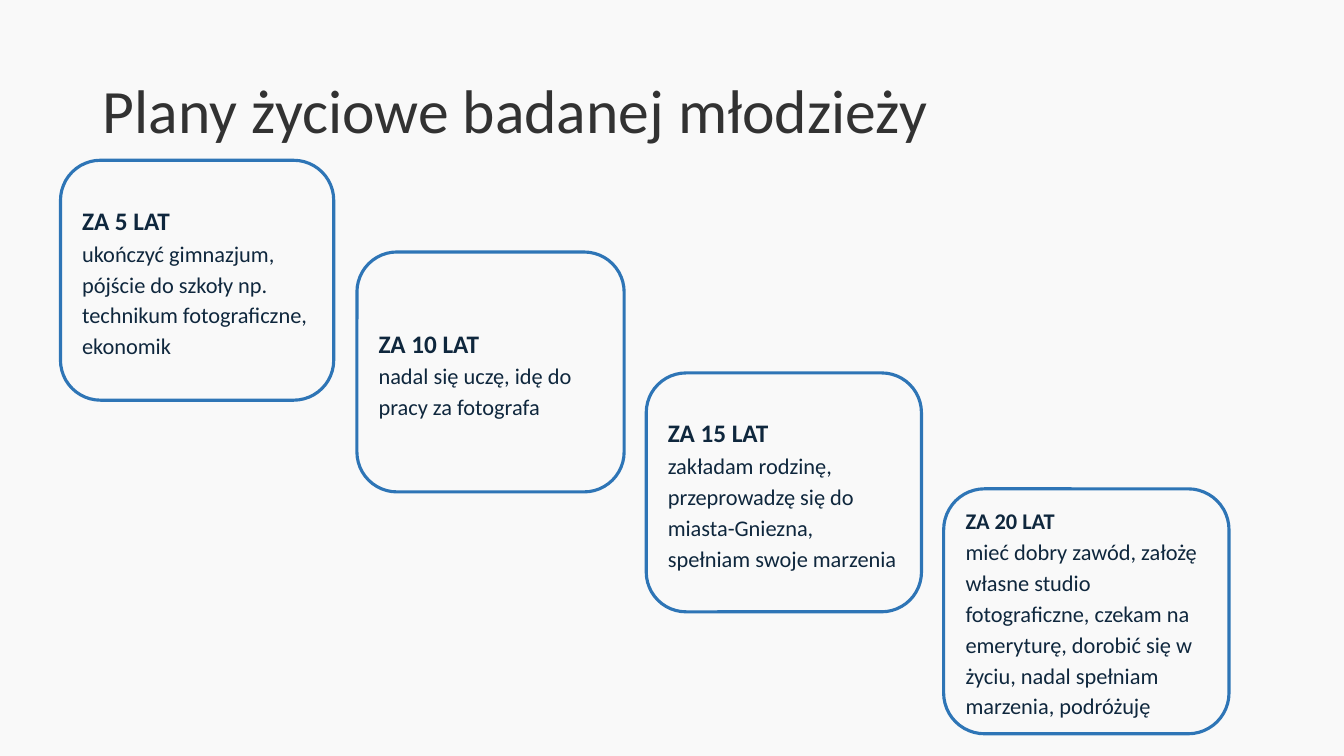
from dataclasses import dataclass

from pptx import Presentation
from pptx.dml.color import RGBColor
from pptx.enum.shapes import MSO_SHAPE
from pptx.enum.text import MSO_ANCHOR, PP_ALIGN
from pptx.slide import Slide
from pptx.util import Emu, Pt

ROUNDED = MSO_SHAPE.ROUNDED_RECTANGLE
MIDDLE = MSO_ANCHOR.MIDDLE
LEFT = PP_ALIGN.LEFT

BACKGROUND = RGBColor(0xF9, 0xF9, 0xF9)
TITLE_COLOR = RGBColor(0x32, 0x32, 0x32)
BORDER = RGBColor(0x2E, 0x75, 0xB6)
TEXT_COLOR = RGBColor(0x0F, 0x27, 0x3D)
FONT = "Calibri"
EMU_PER_PX = 9144  # 100 px to the inch


@dataclass(frozen=True)
class Plan:
    left: int
    top: int
    width: int
    height: int
    heading: str
    wishes: str
    heading_size: int = 18


PLANS = [
    Plan(60, 159, 271, 238, "ZA 5 LAT",
         "ukończyć gimnazjum, pójście do szkoły np. technikum fotograficzne, ekonomik"),
    Plan(354, 250, 265, 238, "ZA 10 LAT",
         "nadal się uczę, idę do pracy za fotografa"),
    Plan(641, 370, 273, 237, "ZA 15 LAT",
         "zakładam rodzinę, przeprowadzę się do miasta-Gniezna, spełniam swoje marzenia"),
    Plan(936, 485, 283, 243, "ZA 20 LAT",
         "mieć dobry zawód, założę własne studio fotograficzne, czekam na emeryturę, "
         "dorobić się w życiu, nadal spełniam marzenia, podróżuję", 16),
]


def px(length: int) -> Emu:
    return Emu(length * EMU_PER_PX)


def write(para, text: str, size: int, color: RGBColor, spacing: float,
          bold: bool = False) -> None:
    para.text = text
    para.alignment = LEFT
    para.line_spacing = spacing
    for span in para.runs:
        span.font.name = FONT
        span.font.size = Pt(size)
        span.font.bold = bold
        span.font.color.rgb = color


def set_title(page: Slide, text: str) -> None:
    title = page.shapes.title
    title.left, title.top, title.width, title.height = px(92), px(40), px(1150), px(145)
    title.text_frame.vertical_anchor = MIDDLE
    title.text_frame.word_wrap = True
    write(title.text_frame.paragraphs[0], text, 44, TITLE_COLOR, 0.9)


def add_plan(page: Slide, plan: Plan) -> None:
    box = page.shapes.add_shape(ROUNDED, px(plan.left), px(plan.top),
                                px(plan.width), px(plan.height))
    box.shadow.inherit = False
    box.fill.solid()
    box.fill.fore_color.rgb = BACKGROUND
    box.line.color.rgb = BORDER
    box.line.width = Pt(2.25)
    frame = box.text_frame
    frame.word_wrap = True
    frame.vertical_anchor = MIDDLE
    write(frame.paragraphs[0], plan.heading, plan.heading_size, TEXT_COLOR, 1.15, bold=True)
    write(frame.add_paragraph(), plan.wishes, 16, TEXT_COLOR, 1.15)


def main() -> None:
    deck = Presentation()
    deck.slide_width, deck.slide_height = px(1333), px(750)
    page = deck.slides.add_slide(deck.slide_layouts[5])  # title only
    page.background.fill.solid()
    page.background.fill.fore_color.rgb = BACKGROUND

    set_title(page, "Plany życiowe badanej młodzieży")

    # Boxes stepping down from left to right
    for plan in PLANS:
        add_plan(page, plan)

    deck.save("out.pptx")


if __name__ == "__main__":
    main()
